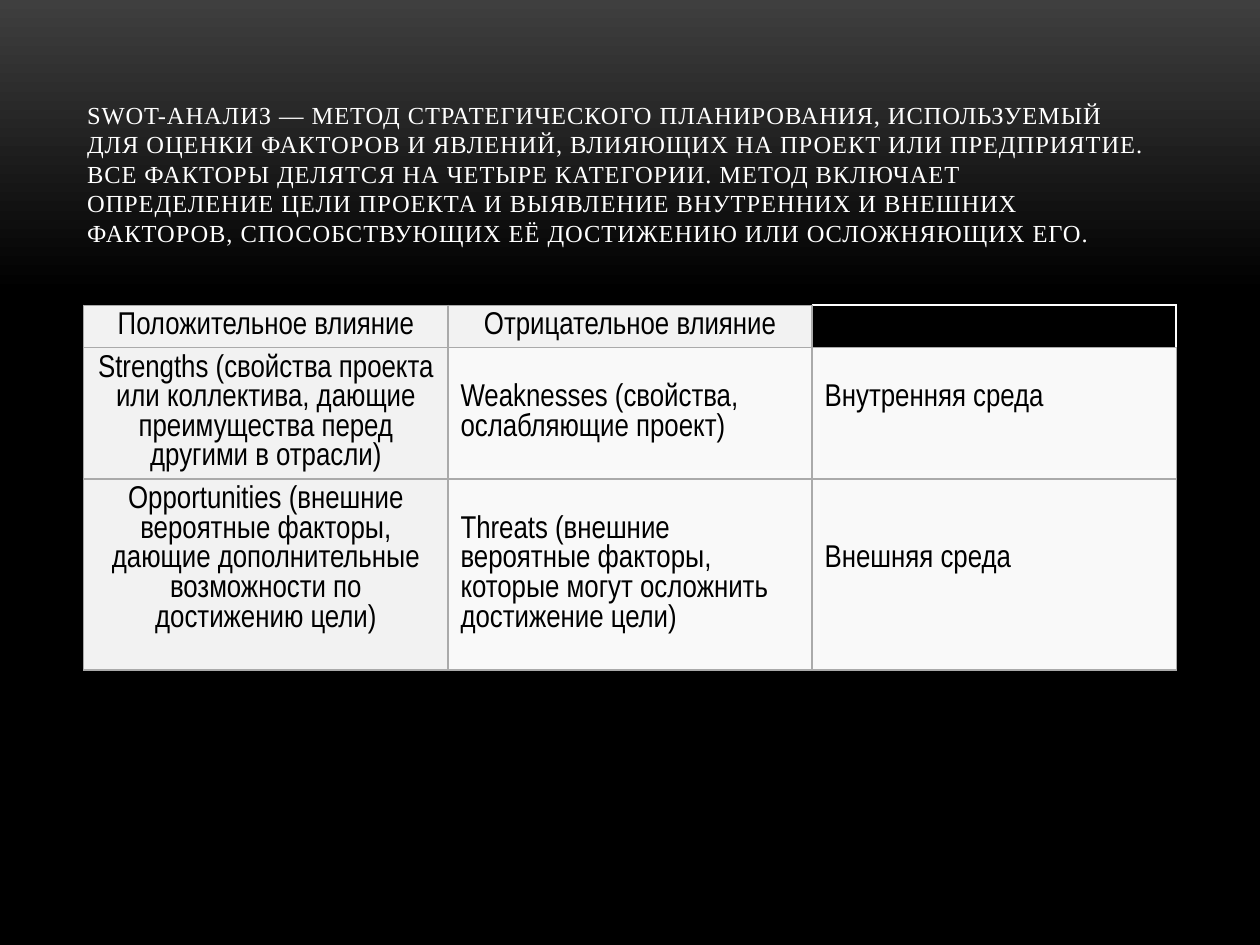
from dataclasses import dataclass

from lxml.etree import SubElement
from pptx import Presentation
from pptx.dml.color import RGBColor
from pptx.enum.text import MSO_ANCHOR, MSO_AUTO_SIZE, PP_ALIGN
from pptx.oxml.ns import qn
from pptx.slide import Slide
from pptx.table import _Cell
from pptx.util import Cm, Pt

HEADER_FILL, BODY_FILL, BORDER = "F2F2F2", "F9F9F9", "AAAAAA"
ALL_SIDES = ("lnL", "lnR", "lnT", "lnB")
MARGIN = 0.13
RAISED_MARGIN = MARGIN + 0.59  # lifts the text by half a line

DEFINITION = (
    "SWOT-АНАЛИЗ — МЕТОД СТРАТЕГИЧЕСКОГО ПЛАНИРОВАНИЯ, ИСПОЛЬЗУЕМЫЙ "
    "ДЛЯ ОЦЕНКИ ФАКТОРОВ И ЯВЛЕНИЙ, ВЛИЯЮЩИХ НА ПРОЕКТ ИЛИ ПРЕДПРИЯТИЕ. "
    "ВСЕ ФАКТОРЫ ДЕЛЯТСЯ НА ЧЕТЫРЕ КАТЕГОРИИ. МЕТОД ВКЛЮЧАЕТ "
    "ОПРЕДЕЛЕНИЕ ЦЕЛИ ПРОЕКТА И ВЫЯВЛЕНИЕ ВНУТРЕННИХ И ВНЕШНИХ "
    "ФАКТОРОВ, СПОСОБСТВУЮЩИХ ЕЁ ДОСТИЖЕНИЮ ИЛИ ОСЛОЖНЯЮЩИХ ЕГО."
)


@dataclass(frozen=True)
class Factor:
    text: str
    header: bool = False
    raised: bool = False


SWOT_ROWS = [
    [Factor("Положительное влияние", header=True),
     Factor("Отрицательное влияние", header=True),
     None],
    [Factor("Strengths (свойства проекта или коллектива, дающие "
            "преимущества перед другими в отрасли)", header=True),
     Factor("Weaknesses (свойства, ослабляющие проект)"),
     Factor("Внутренняя среда", raised=True)],
    [Factor("Opportunities (внешние вероятные факторы, дающие дополнительные "
            "возможности по достижению цели)", header=True, raised=True),
     Factor("Threats (внешние вероятные факторы, которые могут осложнить "
            "достижение цели)"),
     Factor("Внешняя среда", raised=True)],
]
ROW_HEIGHTS = (0.85, 2.64, 3.85)
COLUMN_WIDTH = 7.34


def color(value: str) -> RGBColor:
    return RGBColor.from_string(value)


def apply_format(target: object, values: dict) -> None:
    for attribute, value in values.items():
        setattr(target, attribute, value)


def paint_background(slide: Slide) -> None:
    fill = slide.background.fill
    fill.gradient()
    fill.gradient_angle = 270
    for stop, (position, shade) in zip(
            fill.gradient_stops, [(0, "3F3F3F"), (0.31, "000000")]):
        stop.position = position
        stop.color.rgb = color(shade)


def add_definition(slide: Slide) -> None:
    title = slide.shapes.title
    apply_format(title, {"left": Cm(1.5), "top": Cm(1.93),
                         "width": Cm(22.02), "height": Cm(3.18)})
    apply_format(title.text_frame, {"word_wrap": True,
                                    "auto_size": MSO_AUTO_SIZE.NONE,
                                    "vertical_anchor": MSO_ANCHOR.BOTTOM})
    paragraph = title.text_frame.paragraphs[0]
    paragraph.alignment = PP_ALIGN.LEFT
    run = paragraph.add_run()
    run.text = DEFINITION
    apply_format(run.font, {"name": "Times New Roman", "size": Pt(14)})
    run.font.color.rgb = color("FFFFFF")
    run.font._element.set("spc", "50")


def set_borders(cell: _Cell, sides: tuple[str, ...]) -> None:
    """Draw the given sides; call before the fill, which must follow them."""
    properties = cell._tc.get_or_add_tcPr()
    for side in sides:
        line = SubElement(properties, qn(f"a:{side}"), w=str(Pt(0.75)))
        solid = SubElement(line, qn("a:solidFill"))
        SubElement(solid, qn("a:srgbClr"), val=BORDER)


def fill_factor(cell: _Cell, factor: Factor) -> None:
    set_borders(cell, ALL_SIDES)
    cell.fill.solid()
    cell.fill.fore_color.rgb = color(HEADER_FILL if factor.header else BODY_FILL)
    apply_format(cell, {
        "vertical_anchor": MSO_ANCHOR.MIDDLE,
        "margin_top": Cm(MARGIN),
        "margin_bottom": Cm(RAISED_MARGIN if factor.raised else MARGIN),
    })
    paragraph = cell.text_frame.paragraphs[0]
    paragraph.alignment = PP_ALIGN.CENTER if factor.header else PP_ALIGN.LEFT
    run = paragraph.add_run()
    run.text = factor.text
    apply_format(run.font, {"name": "Arial Narrow", "size": Pt(18), "bold": False})
    run.font.color.rgb = color("000000")


def clear_corner(cell: _Cell) -> None:
    set_borders(cell, ("lnL", "lnB"))
    cell.fill.background()
    # A small end mark keeps the empty cell from stretching its row
    SubElement(cell.text_frame.paragraphs[0]._p, qn("a:endParaRPr"), sz="1000")


def add_swot_table(slide: Slide) -> None:
    columns = len(SWOT_ROWS[0])
    table = slide.shapes.add_table(
        len(SWOT_ROWS), columns, Cm(1.69), Cm(6.15),
        Cm(COLUMN_WIDTH * columns), Cm(sum(ROW_HEIGHTS))).table
    apply_format(table, {"first_row": False, "horz_banding": False})
    for column in table.columns:
        column.width = Cm(COLUMN_WIDTH)
    for row, height, factors in zip(table.rows, ROW_HEIGHTS, SWOT_ROWS):
        row.height = Cm(height)
        for cell, factor in zip(row.cells, factors):
            if factor:
                fill_factor(cell, factor)
            else:
                clear_corner(cell)


def main() -> None:
    presentation = Presentation()
    apply_format(presentation, {"slide_width": Cm(25.4), "slide_height": Cm(19.05)})
    slide = presentation.slides.add_slide(presentation.slide_layouts[5])
    paint_background(slide)
    add_definition(slide)
    add_swot_table(slide)
    presentation.save("out.pptx")


if __name__ == "__main__":
    main()
